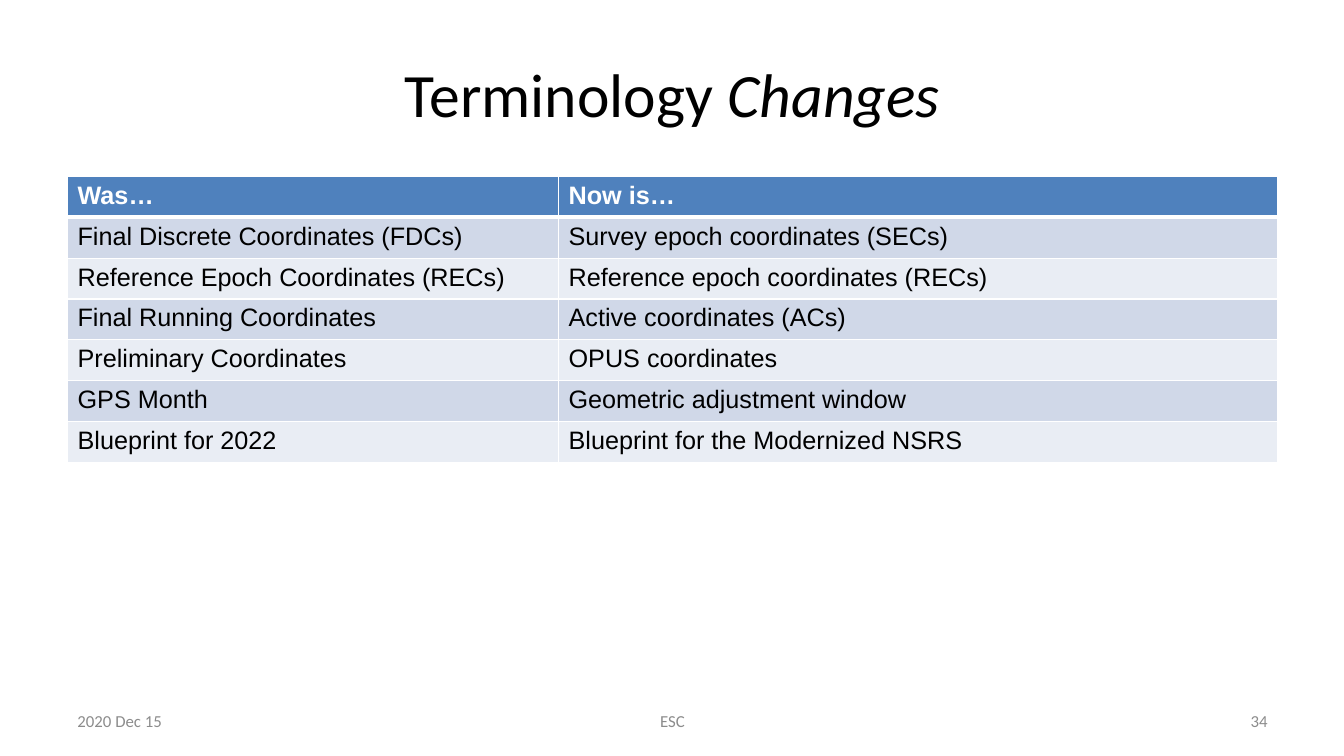
from dataclasses import dataclass

from lxml import etree
from pptx import Presentation
from pptx import util as u
from pptx.dml.color import RGBColor
from pptx.enum import text
from pptx.oxml import ns


@dataclass(frozen=True)
class Theme:
    ink: str = "000000"
    white: str = "FFFFFF"
    gray: str = "8C8C8C"
    head: str = "4F81BD"
    bands: tuple = ("D0D8E8", "E9EDF4")
    sans: str = "Calibri"
    grid: str = "Arial"
    title: int = 44
    body: int = 18
    foot: int = 12
    thin: int = 1
    thick: int = 3


THEME = Theme()
ALIGN = text.PP_ALIGN

TERMS = [
    ("Was…", "Now is…"),
    ("Final Discrete Coordinates (FDCs)", "Survey epoch coordinates (SECs)"),
    ("Reference Epoch Coordinates (RECs)", "Reference epoch coordinates (RECs)"),
    ("Final Running Coordinates", "Active coordinates (ACs)"),
    ("Preliminary Coordinates", "OPUS coordinates"),
    ("GPS Month", "Geometric adjustment window"),
    ("Blueprint for 2022", "Blueprint for the Modernized NSRS"),
]
WIDTHS = (4.87, 7.13)
LEFT = 0.67
ROW = 2.84 / len(TERMS)

FOOTS = [
    ("2020 Dec 15", LEFT, 3.11, ALIGN.LEFT),
    ("ESC", 4.56, 4.22, ALIGN.CENTER),
    ("34", 9.56, 3.11, ALIGN.RIGHT),
]


def add_run(para, words, size, face, color, bold=False, slant=False):
    run = para.add_run()
    run.text = words
    font = run.font
    font.size = u.Pt(size)
    font.name = face
    font.bold = bold
    font.italic = slant
    font.color.rgb = RGBColor.from_string(color)


def add_label(slide, box, align):
    frame = slide.shapes.add_textbox(*map(u.Inches, box)).text_frame
    frame.word_wrap = True
    frame.vertical_anchor = text.MSO_ANCHOR.MIDDLE
    para = frame.paragraphs[0]
    para.alignment = align
    return para


def add_edge(cell, side, width):
    props = cell._tc.get_or_add_tcPr()
    line = etree.SubElement(props, ns.qn(f"a:ln{side}"), w=str(u.Pt(width)))
    fill = etree.SubElement(line, ns.qn("a:solidFill"))
    etree.SubElement(fill, ns.qn("a:srgbClr"), val=THEME.white)


def fill_cell(cell, words, row):
    head = row == 0
    for side in "LRTB":
        heavy = (row, side) in ((0, "B"), (1, "T"))
        add_edge(cell, side, THEME.thick if heavy else THEME.thin)
    cell.fill.solid()
    shade = THEME.head if head else THEME.bands[(row - 1) % 2]
    cell.fill.fore_color.rgb = RGBColor.from_string(shade)
    color = THEME.white if head else THEME.ink
    add_run(cell.text_frame.paragraphs[0], words, THEME.body, THEME.grid,
            color, bold=head)


def add_terms(slide):
    box = (LEFT, 1.75, sum(WIDTHS), ROW * len(TERMS))
    table = slide.shapes.add_table(
        len(TERMS), len(WIDTHS), *map(u.Inches, box)).table
    for col, width in zip(table.columns, WIDTHS):
        col.width = u.Inches(width)
    for row, pair in enumerate(TERMS):
        table.rows[row].height = u.Inches(ROW)
        for col, words in enumerate(pair):
            fill_cell(table.cell(row, col), words, row)


def add_title(slide):
    para = add_label(slide, (LEFT, 0.3, 12, 1.25), ALIGN.CENTER)
    for words, slant in (("Terminology ", False), ("Changes", True)):
        add_run(para, words, THEME.title, THEME.sans, THEME.ink, slant=slant)


def add_foot(slide, words, left, width, align):
    para = add_label(slide, (left, 6.95, width, 0.4), align)
    add_run(para, words, THEME.foot, THEME.sans, THEME.gray)


def main():
    deck = Presentation()
    deck.slide_width = u.Inches(13.33)
    deck.slide_height = u.Inches(7.5)
    slide = deck.slides.add_slide(deck.slide_layouts[6])
    add_title(slide)
    add_terms(slide)
    for foot in FOOTS:
        add_foot(slide, *foot)
    deck.save("out.pptx")


if __name__ == "__main__":
    main()
